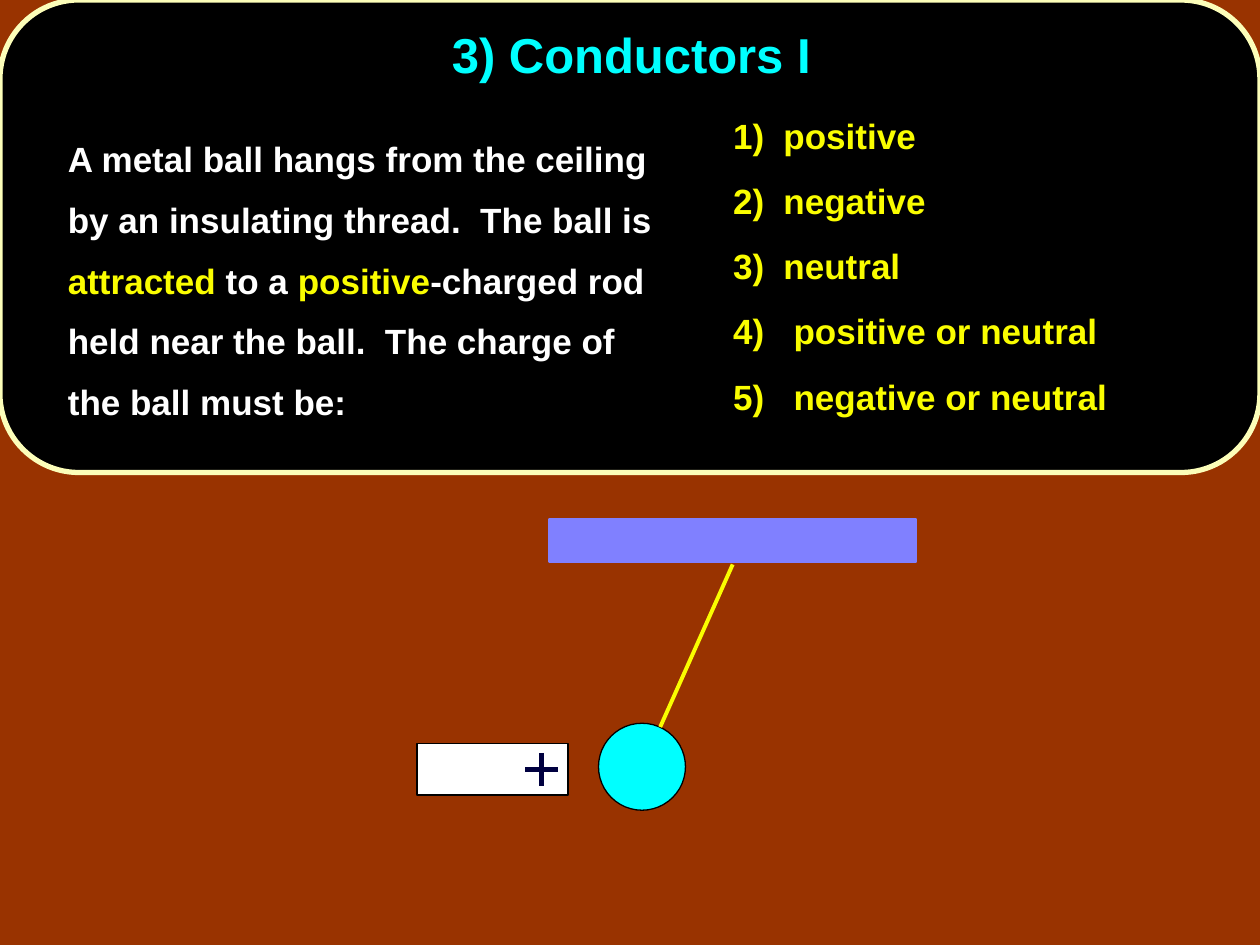
import pptx
import pptx.util
from lxml import etree
from pptx.dml.color import RGBColor
from pptx.enum.shapes import MSO_CONNECTOR, MSO_SHAPE
from pptx.enum.text import MSO_ANCHOR, PP_ALIGN
from pptx.oxml.ns import qn

BROWN = RGBColor(0x99, 0x33, 0x00)
BLACK = RGBColor(0x00, 0x00, 0x00)
WHITE = RGBColor(0xFF, 0xFF, 0xFF)
CREAM = RGBColor(0xFC, 0xFE, 0xB9)
CYAN = RGBColor(0x00, 0xFF, 0xFF)
YELLOW = RGBColor(0xFA, 0xFD, 0x00)
LAVENDER = RGBColor(0x80, 0x80, 0xFF)
NAVY = RGBColor(0x00, 0x00, 0x40)

WIDTH, HEIGHT = 10, 7.5

# Each option with the width of its number column, in inches
OPTIONS = [
    ("1)", "positive", 0.4),
    ("2)", "negative", 0.4),
    ("3)", "neutral", 0.4),
    ("4)", "positive or neutral", 0.48),
    ("5)", "negative or neutral", 0.48),
]
QUESTION = [
    ("A metal ball hangs from the ceiling by an insulating thread.  The ball is ", WHITE),
    ("attracted", YELLOW),
    (" to a ", WHITE),
    ("positive", YELLOW),
    ("-charged rod held near the ball.  The charge of the ball must be:", WHITE),
]


def inches(*lengths):
    return [pptx.util.Inches(length) for length in lengths]


def add_filled(slide, kind, box, fill, line, line_width):
    shape = slide.shapes.add_shape(kind, *inches(*box))
    shape.shadow.inherit = False
    shape.fill.solid()
    shape.fill.fore_color.rgb = fill
    shape.line.color.rgb = line
    shape.line.width = pptx.util.Pt(line_width)
    return shape


def add_line(slide, start, end, color, width):
    line = slide.shapes.add_connector(MSO_CONNECTOR.STRAIGHT, *inches(*start, *end))
    line.line.color.rgb = color
    line.line.width = pptx.util.Pt(width)
    etree.SubElement(line._element.spPr, qn("a:effectLst"))


def add_text_frame(slide, box):
    frame = slide.shapes.add_textbox(*inches(*box)).text_frame
    frame.word_wrap = True
    return frame


def style_paragraph(paragraph, size, spacing, color=None):
    paragraph.line_spacing = spacing
    font = paragraph.font
    font.name, font.size, font.bold = "Arial", pptx.util.Pt(size), True
    if color is not None:
        font.color.rgb = color


def set_indent(paragraph, margin, indent=0):
    properties = paragraph._p.get_or_add_pPr()
    properties.set("marL", str(pptx.util.Inches(margin)))
    properties.set("indent", str(pptx.util.Inches(indent)))


def add_title(slide, box):
    frame = add_text_frame(slide, box)
    frame.vertical_anchor = MSO_ANCHOR.MIDDLE
    paragraph = frame.paragraphs[0]
    paragraph.text = "3) Conductors I"
    paragraph.alignment = PP_ALIGN.CENTER
    style_paragraph(paragraph, 28, 0.9, CYAN)


def add_question(slide, box):
    paragraph = add_text_frame(slide, box).paragraphs[0]
    set_indent(paragraph, 0.44)
    style_paragraph(paragraph, 20, 1.45)
    for text, color in QUESTION:
        run = paragraph.add_run()
        run.text = text
        run.font.color.rgb = color


def add_options(slide, box):
    frame = add_text_frame(slide, box)
    for index, (number, answer, column) in enumerate(OPTIONS):
        paragraph = frame.add_paragraph() if index else frame.paragraphs[0]
        paragraph.text = f"{number}\t{answer}"
        set_indent(paragraph, column, -column)
        if index:
            paragraph.space_before = pptx.util.Pt(6)
        style_paragraph(paragraph, 20, 1.3, YELLOW)


def add_panel(slide, left, top, width, height):
    """Question panel with title, question and answer options."""
    panel = add_filled(slide, MSO_SHAPE.ROUNDED_RECTANGLE,
                       (left, top, width, height), BLACK, CREAM, 3)
    panel.adjustments[0] = 0.167
    add_title(slide, (left + 1.02, top, 7.98, 0.92))
    add_options(slide, (left + 0.572 * width, top + 0.76, 3.76, 2.83))
    add_question(slide, (left, top + 0.89, 5.45, 2.43))


def add_pendulum(slide, left, top, width):
    """Ceiling with a ball on a thread, drawn towards a charged rod."""
    ceiling_height, ball_size = 0.34, 0.69
    add_filled(slide, MSO_SHAPE.RECTANGLE, (left, top, width, ceiling_height),
               LAVENDER, LAVENDER, 1.5)
    add_filled(slide, MSO_SHAPE.OVAL, (left + 0.39, top + 1.62, ball_size, ball_size),
               CYAN, BLACK, 0.75)
    add_line(slide, (left + 0.88, top + 1.65),
             (left + width / 2, top + ceiling_height + 0.02), YELLOW, 2.25)


def add_rod(slide, left, top, width, height):
    """Charged rod with a plus sign near its right end."""
    add_filled(slide, MSO_SHAPE.RECTANGLE, (left, top, width, height), WHITE, BLACK, 0.75)
    x, y, arm = left + width - 0.21, top + height / 2, 0.13
    add_line(slide, (x - arm, y), (x + arm, y), NAVY, 3)
    add_line(slide, (x, y - arm), (x, y + arm), NAVY, 3)


def main():
    presentation = pptx.Presentation()
    presentation.slide_width, presentation.slide_height = inches(WIDTH, HEIGHT)
    slide = presentation.slides.add_slide(presentation.slide_layouts[6])
    slide.background.fill.solid()
    slide.background.fill.fore_color.rgb = BROWN

    add_panel(slide, 0, 0, WIDTH, HEIGHT / 2)
    add_pendulum(slide, 4.36, 4.12, 2.91)
    add_rod(slide, 3.31, 5.9, 1.2, 0.41)
    presentation.save("out.pptx")


if __name__ == "__main__":
    main()
